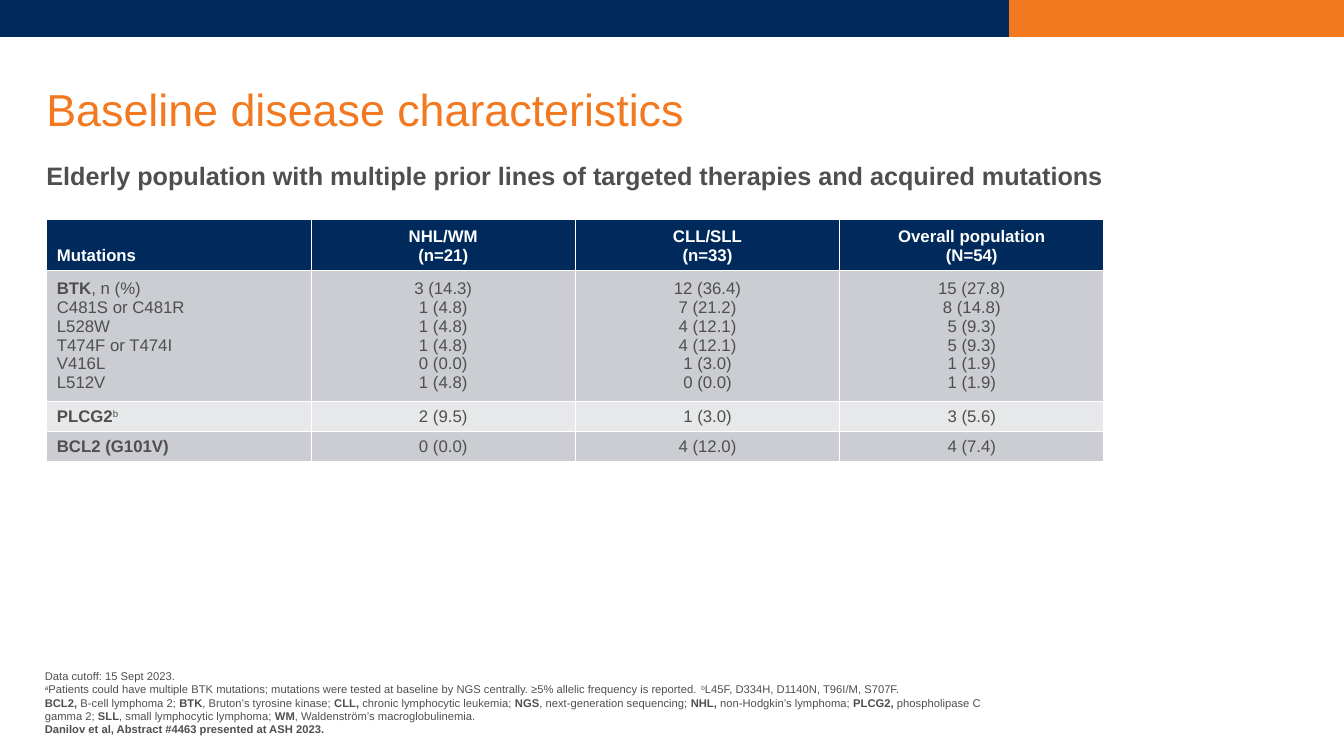
from pptx import Presentation
from pptx.dml.color import RGBColor
from pptx.enum.shapes import MSO_SHAPE
from pptx.enum.text import MSO_ANCHOR, PP_ALIGN
from pptx.util import Cm, Pt

NAVY = RGBColor(0x00, 0x2A, 0x5C)
ORANGE = RGBColor(0xF3, 0x79, 0x20)
GREY_TEXT = RGBColor(0x4E, 0x4F, 0x4E)
DARK_ROW = RGBColor(0xCC, 0xCD, 0xD2)
LIGHT_ROW = RGBColor(0xE7, 0xE8, 0xEA)
WHITE = RGBColor(0xFF, 0xFF, 0xFF)
RECTANGLE = MSO_SHAPE.RECTANGLE
BOTTOM, MIDDLE = MSO_ANCHOR.BOTTOM, MSO_ANCHOR.MIDDLE
LEFT, CENTER = PP_ALIGN.LEFT, PP_ALIGN.CENTER
PLAIN, BOLD, SUPERSCRIPT = "plain", "bold", "superscript"


def add_text_frame(left, top, width, height, anchor):
    text_frame = slide.shapes.add_textbox(Cm(left), Cm(top), Cm(width), Cm(height)).text_frame
    text_frame.word_wrap = True
    text_frame.vertical_anchor = anchor
    text_frame.margin_left = text_frame.margin_right = 0
    text_frame.margin_top = text_frame.margin_bottom = 0
    return text_frame


def fill_paragraphs(text_frame, paragraphs, size, color, alignment=LEFT):
    for index, runs in enumerate(paragraphs):
        paragraph = text_frame.add_paragraph() if index else text_frame.paragraphs[0]
        paragraph.alignment = alignment
        paragraph.font.name = "Arial"
        paragraph.font.size = Pt(size)
        paragraph.font.color.rgb = color
        for text, style in runs:
            run = paragraph.add_run()
            run.text = text
            run.font.bold = style == BOLD
            if style == SUPERSCRIPT:
                run.font._element.set("baseline", "30000")


presentation = Presentation()
presentation.slide_width = Cm(33.87)
presentation.slide_height = Cm(19.05)
slide = presentation.slides.add_slide(presentation.slide_layouts[6])

for left, width, color in ((0, 25.43, NAVY), (25.43, 8.44, ORANGE)):
    band = slide.shapes.add_shape(RECTANGLE, Cm(left), 0, Cm(width), Cm(0.93))
    band.shadow.inherit = False
    band.fill.solid()
    band.fill.fore_color.rgb = color
    band.line.fill.background()

headings = (
    ("Baseline disease characteristics", 1.6, 1.83, BOTTOM, 32, ORANGE, PLAIN),
    ("Elderly population with multiple prior lines of targeted therapies and acquired mutations",
     3.56, 1.8, MIDDLE, 18, GREY_TEXT, BOLD),
)
for text, top, height, anchor, size, color, style in headings:
    heading = add_text_frame(1.17, top, 31.57, height, anchor)
    fill_paragraphs(heading, [[(text, style)]], size, color)
    heading.paragraphs[0].line_spacing = 0.9

header = ["Mutations", "NHL/WM\n(n=21)", "CLL/SLL\n(n=33)", "Overall population\n(N=54)"]
btk_label = [
    [("BTK", BOLD), (", n (%)", PLAIN)],
    *[[(name, PLAIN)] for name in
      ("C481S or C481R", "L528W", "T474F or T474I", "V416L", "L512V")],
]
table_rows = (
    (1.2, NAVY, [[("Mutations", BOLD)]], header[1:]),
    (3.25, DARK_ROW, btk_label, [
        "3 (14.3)\n1 (4.8)\n1 (4.8)\n1 (4.8)\n0 (0.0)\n1 (4.8)",
        "12 (36.4)\n7 (21.2)\n4 (12.1)\n4 (12.1)\n1 (3.0)\n0 (0.0)",
        "15 (27.8)\n8 (14.8)\n5 (9.3)\n5 (9.3)\n1 (1.9)\n1 (1.9)",
    ]),
    (0.73, LIGHT_ROW, [[("PLCG2", BOLD), ("b", SUPERSCRIPT)]],
     ["2 (9.5)", "1 (3.0)", "3 (5.6)"]),
    (0.73, DARK_ROW, [[("BCL2 (G101V)", BOLD)]],
     ["0 (0.0)", "4 (12.0)", "4 (7.4)"]),
)
table = slide.shapes.add_table(
    len(table_rows), len(header), Cm(1.18), Cm(5.54), Cm(26.64), Cm(5.91)).table
for column in table.columns:
    column.width = Cm(6.66)

for row_index, (height, fill, label, values) in enumerate(table_rows):
    table.rows[row_index].height = Cm(height)
    is_header = row_index == 0
    style = BOLD if is_header else PLAIN
    contents = [label] + [[[(line, style)] for line in value.split("\n")] for value in values]
    for column_index, paragraphs in enumerate(contents):
        cell = table.cell(row_index, column_index)
        cell.fill.solid()
        cell.fill.fore_color.rgb = fill
        cell.vertical_anchor = BOTTOM if is_header else MIDDLE
        fill_paragraphs(cell.text_frame, paragraphs, 12,
                        WHITE if is_header else GREY_TEXT,
                        CENTER if column_index else LEFT)

footnotes = [
    [("Data cutoff: 15 Sept 2023.", PLAIN)],
    [("a", SUPERSCRIPT),
     ("Patients could have multiple BTK mutations; mutations were tested at baseline by NGS "
      "centrally. ≥5% allelic frequency is reported. ", PLAIN),
     ("b", SUPERSCRIPT), ("L45F, D334H, D1140N, T96I/M, S707F.", PLAIN)],
    [("BCL2, ", BOLD), ("B-cell lymphoma 2; ", PLAIN),
     ("BTK", BOLD), (", Bruton’s tyrosine kinase; ", PLAIN),
     ("CLL, ", BOLD), ("chronic lymphocytic leukemia; ", PLAIN),
     ("NGS", BOLD), (", next-generation sequencing; ", PLAIN),
     ("NHL, ", BOLD), ("non-Hodgkin’s lymphoma; ", PLAIN),
     ("PLCG2, ", BOLD), ("phospholipase C gamma 2; ", PLAIN),
     ("SLL", BOLD), (", small lymphocytic lymphoma; ", PLAIN),
     ("WM", BOLD), (", Waldenström’s macroglobulinemia.", PLAIN)],
    [("Danilov et al, Abstract #4463 presented at ASH 2023.", BOLD)],
]
fill_paragraphs(add_text_frame(1.13, 15.93, 23.7, 2.62, BOTTOM), footnotes, 8, GREY_TEXT)

presentation.save("out.pptx")
